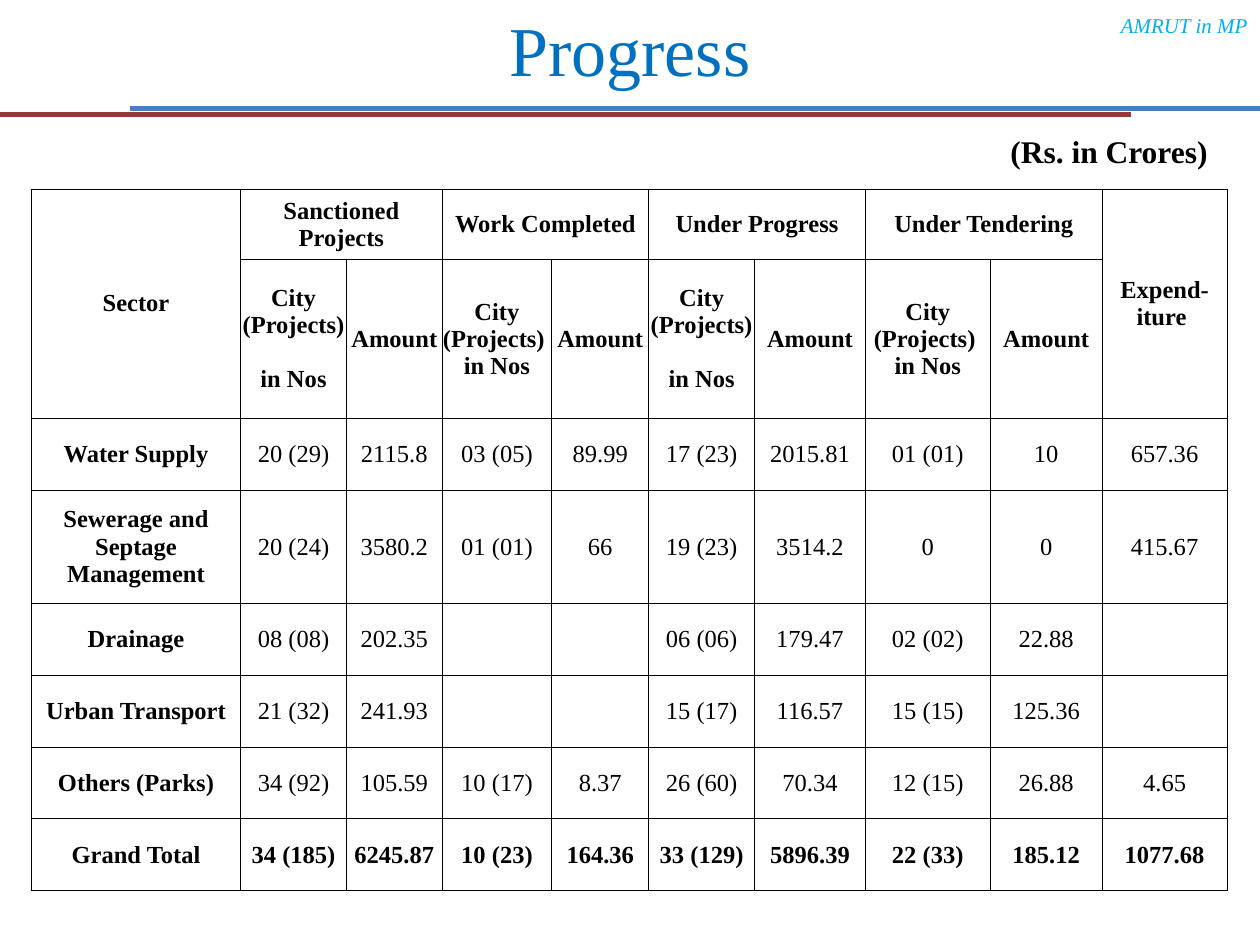
import copy
from dataclasses import dataclass

import lxml.etree
import pptx
import pptx.dml.color
import pptx.enum.shapes
import pptx.enum.text
import pptx.oxml
import pptx.oxml.ns
import pptx.util

Inches = pptx.util.Inches
Pt = pptx.util.Pt
Align = pptx.enum.text.PP_ALIGN
Anchor = pptx.enum.text.MSO_ANCHOR
qn = pptx.oxml.ns.qn

FONT = "Times New Roman"
BLACK = "000000"
COLUMN_WIDTHS = [1.66, 0.84, 0.76, 0.87, 0.77, 0.84, 0.88, 0.99, 0.89, 0.99]
ROW_HEIGHTS = [0.56, 1.26, 0.57, 0.9, 0.57, 0.57, 0.57, 0.57]
GROUPS = ["Sanctioned Projects", "Work Completed", "Under Progress", "Under Tendering"]
SUBHEADS = ["City (Projects) \vin Nos", "Amount"]
SECTORS = [
    ["Water Supply", "20 (29)", "2115.8", "03 (05)", "89.99",
     "17 (23)", "2015.81", "01 (01)", "10", "657.36"],
    ["Sewerage and Septage Management", "20 (24)", "3580.2", "01 (01)", "66",
     "19 (23)", "3514.2", "0", "0", "415.67"],
    ["Drainage", "08 (08)", "202.35", "", "",
     "06 (06)", "179.47", "02 (02)", "22.88", ""],
    ["Urban Transport", "21 (32)", "241.93", "", "",
     "15 (17)", "116.57", "15 (15)", "125.36", ""],
    ["Others (Parks)", "34 (92)", "105.59", "10 (17)", "8.37",
     "26 (60)", "70.34", "12 (15)", "26.88", "4.65"],
    ["Grand Total", "34 (185)", "6245.87", "10 (23)", "164.36",
     "33 (129)", "5896.39", "22 (33)", "185.12", "1077.68"],
]


@dataclass
class Rule:
    left: float
    right: float
    y: float
    color: str


@dataclass
class Label:
    text: str
    left: float
    top: float
    width: float
    height: float
    size: float
    color: str
    align: Align
    bold: bool = False
    italic: bool = False
    shadow: bool = False


RULES = [Rule(1.03, 10.03, 0.86, "4B7EBC"), Rule(-0.02, 8.98, 0.91, "953735")]
LABELS = [
    Label("(Rs. in Crores)", 7.92, 1, 2.08, 0.4, 18, BLACK, Align.LEFT, bold=True),
    Label("Progress", 0, 0, 10, 0.77, 40, "0070C0", Align.CENTER, shadow=True),
    Label("AMRUT in MP", 6.83, 0, 3.17, 0.4, 12, "00B0F0", Align.RIGHT, italic=True),
]


def rgb(color: str) -> pptx.dml.color.RGBColor:
    """Turn a hex string into a colour."""
    return pptx.dml.color.RGBColor.from_string(color)


def write_text(frame, text: str, *, size: float, color: str = BLACK, align=Align.CENTER,
               bold: bool = False, italic: bool = False, shadow: bool = False) -> None:
    """Fill a text frame with one formatted paragraph."""
    frame.word_wrap = True
    paragraph = frame.paragraphs[0]
    paragraph.text = text
    paragraph.alignment = align
    for run in paragraph.runs:
        run.font.name = FONT
        run.font.size = Pt(size)
        run.font.bold = bold
        run.font.italic = italic
        run.font.color.rgb = rgb(color)
        if shadow:
            add_text_shadow(run)
    for line_break in paragraph._p.findall(qn("a:br")):
        line_break.append(copy.deepcopy(paragraph.runs[0]._r.rPr))


def add_text_shadow(run) -> None:
    """Cast a soft grey shadow below the letters of a run."""
    namespace = pptx.oxml.ns.nsdecls("a")
    effects = pptx.oxml.parse_xml(
        f'<a:effectLst {namespace}><a:outerShdw blurRad="38100" dist="38100" dir="2700000">'
        '<a:srgbClr val="000000"><a:alpha val="43000"/></a:srgbClr>'
        "</a:outerShdw></a:effectLst>")
    run._r.rPr.find(qn("a:solidFill")).addnext(effects)


def add_rule(slide, rule: Rule) -> None:
    """Draw one horizontal rule."""
    connector = slide.shapes.add_connector(
        pptx.enum.shapes.MSO_CONNECTOR.STRAIGHT,
        Inches(rule.left), Inches(rule.y), Inches(rule.right), Inches(rule.y))
    connector.line.color.rgb = rgb(rule.color)
    connector.line.width = Pt(3)
    lxml.etree.SubElement(connector._element.spPr, qn("a:effectLst"))


def add_label(slide, label: Label) -> None:
    """Draw one text box."""
    shape = slide.shapes.add_textbox(Inches(label.left), Inches(label.top),
                                     Inches(label.width), Inches(label.height))
    shape.text_frame.vertical_anchor = Anchor.MIDDLE
    write_text(shape.text_frame, label.text, size=label.size, color=label.color,
               align=label.align, bold=label.bold, italic=label.italic, shadow=label.shadow)


def style_cell(cell) -> None:
    """Clear the fill and margins of a cell and give it thin black borders."""
    cell.fill.background()
    cell.vertical_anchor = Anchor.MIDDLE
    cell.margin_left = cell.margin_right = cell.margin_top = cell.margin_bottom = 0
    properties = cell._tc.get_or_add_tcPr()
    for position, side in enumerate("LRTB"):
        border = pptx.oxml.parse_xml(
            f'<a:ln{side} {pptx.oxml.ns.nsdecls("a")} w="{Pt(0.5)}"><a:solidFill>'
            f'<a:srgbClr val="{BLACK}"/></a:solidFill></a:ln{side}>')
        properties.insert(position, border)


def add_progress_table(slide) -> None:
    """Draw the table of sectors with its two-level header."""
    group_row = ["Sector"] + [text for group in GROUPS for text in (group, "")] + ["Expend-iture "]
    subhead_row = [""] + SUBHEADS * len(GROUPS) + [""]
    rows = [group_row, subhead_row] + SECTORS
    table = slide.shapes.add_table(
        len(rows), len(COLUMN_WIDTHS), Inches(0.25), Inches(1.5),
        Inches(sum(COLUMN_WIDTHS)), Inches(sum(ROW_HEIGHTS))).table
    table.first_row = table.horz_banding = False
    for column, width in zip(table.columns, COLUMN_WIDTHS):
        column.width = Inches(width)
    for row, height in zip(table.rows, ROW_HEIGHTS):
        row.height = Inches(height)
    for row_index, row in enumerate(rows):
        for column_index, text in enumerate(row):
            cell = table.cell(row_index, column_index)
            style_cell(cell)
            bold = row_index < 2 or row_index == len(rows) - 1 or column_index == 0
            write_text(cell.text_frame, text, size=14, bold=bold)
    last = len(COLUMN_WIDTHS) - 1
    for column_index in (0, last):
        table.cell(0, column_index).merge(table.cell(1, column_index))
    for column_index in range(1, last, 2):
        table.cell(0, column_index).merge(table.cell(0, column_index + 1))


def main() -> None:
    """Build the progress slide and save it."""
    presentation = pptx.Presentation()
    presentation.slide_width = Inches(10)
    presentation.slide_height = Inches(7.5)
    slide = presentation.slides.add_slide(presentation.slide_layouts[6])
    for rule in RULES:
        add_rule(slide, rule)
    add_progress_table(slide)
    for label in LABELS:
        add_label(slide, label)
    presentation.save("out.pptx")


if __name__ == "__main__":
    main()
